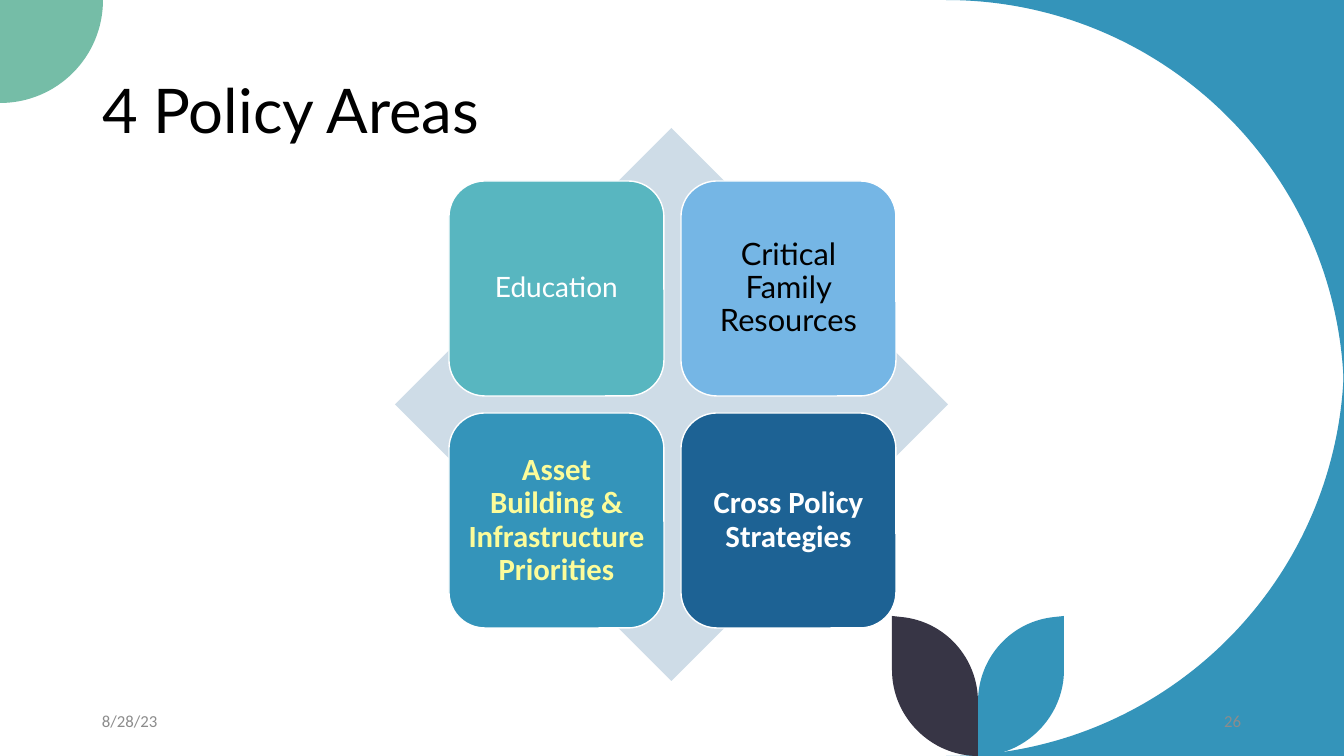
"""Build the "4 Policy Areas" slide: four tiles over a diamond, with leaf decoration."""
from lxml.etree import SubElement
from pptx import Presentation
from pptx.dml.color import RGBColor
from pptx.enum.shapes import MSO_SHAPE as Preset
from pptx.enum.text import MSO_ANCHOR as Anchor, PP_ALIGN as Align
from pptx.oxml.ns import qn
from pptx.util import Pt

WIDTH, HEIGHT = 1344, 756
PX = 12192000 / WIDTH
SLIDE_NUMBER = "26"

BLACK = RGBColor(0x00, 0x00, 0x00)
WHITE = RGBColor(0xFF, 0xFF, 0xFF)
YELLOW = RGBColor(0xFC, 0xFC, 0x9A)
GRAY = RGBColor(0x8C, 0x8C, 0x8C)
PALE_BLUE = RGBColor(0xCE, 0xDC, 0xE7)
TEAL = RGBColor(0x58, 0xB6, 0xC0)
SKY = RGBColor(0x75, 0xB6, 0xE5)
BLUE = RGBColor(0x34, 0x94, 0xBA)
NAVY = RGBColor(0x1D, 0x62, 0x94)
GREEN = RGBColor(0x75, 0xBD, 0xA7)
DARK = RGBColor(0x37, 0x35, 0x45)

presentation = Presentation()
presentation.slide_width = round(WIDTH * PX)
presentation.slide_height = round(HEIGHT * PX)
presentation.element.set("firstSlideNum", SLIDE_NUMBER)
slide = presentation.slides.add_slide(presentation.slide_layouts[5])
shapes = slide.shapes


def box(*lengths):
    return [round(length * PX) for length in lengths]


def write_text(shape, text, *, size, color, font="Lato", bold=False,
               align=Align.LEFT, spacing=1.0, inset=None):
    frame = shape.text_frame
    frame.word_wrap = True
    frame.vertical_anchor = Anchor.MIDDLE
    if inset is not None:
        frame.margin_left = frame.margin_right = round(inset * PX)
        frame.margin_top = frame.margin_bottom = round(inset * PX)
    paragraph = frame.paragraphs[0]
    paragraph.alignment = align
    paragraph.line_spacing = spacing
    run = paragraph.add_run()
    run.text = text
    run.font.name = font
    run.font.size = Pt(size)
    run.font.bold = bold
    run.font.color.rgb = color
    return run


title = shapes.title
title.left, title.top, title.width, title.height = box(92, 41, 1160, 146)
write_text(title, "4 Policy Areas", size=44, color=BLACK, spacing=0.9)

right_leaf = [(1064, 616), (1064, 670), (1064, 717, 1025, 756, 978, 756),
              (978, 702), (978, 658, 1011, 621, 1055, 617)]
left_leaf = [tuple(1956 - value if index % 2 == 0 else value
                   for index, value in enumerate(step)) for step in right_leaf]
outlines = [
    ([(1344, 0), (946, 0), (1166, 0, 1344, 178, 1344, 398)], BLUE),
    ([(1344, 358), (1344, 578, 1166, 756, 946, 756), (1344, 756)], BLUE),
    ([(0, 0), (103, 0), (103, 57, 57, 103, 0, 103)], GREEN),
    (right_leaf, BLUE),
    (left_leaf, DARK),
]
for steps, color in outlines:
    ends = [step[-2:] for step in steps]
    left, top = min(x for x, y in ends), min(y for x, y in ends)
    builder = shapes.build_freeform(*ends[0], scale=PX)
    builder.add_line_segments(ends[1:], close=True)
    outline = builder.convert_to_shape()
    segments = list(outline.element.iter(qn("a:lnTo")))
    for step, segment in zip(steps[1:], segments):
        if len(step) == 6:
            curve = segment.getparent().makeelement(qn("a:cubicBezTo"))
            for x, y in zip(step[::2], step[1::2]):
                SubElement(curve, qn("a:pt"), x=str(x - left), y=str(y - top))
            segment.getparent().replace(segment, curve)
    outline.shadow.inherit = False
    outline.fill.solid()
    outline.fill.fore_color.rgb = color
    outline.line.fill.background()

diamond = shapes.add_shape(Preset.DIAMOND, *box(395, 128, 553, 553))
diamond.shadow.inherit = False
diamond.fill.solid()
diamond.fill.fore_color.rgb = PALE_BLUE
diamond.line.fill.background()

TILE_LEFT, TILE_TOP, TILE_SIZE, TILE_PITCH = 449, 181, 215, 232
tiles = [
    ("Education", TEAL, dict(size=20, color=WHITE)),
    ("Critical Family Resources", SKY, dict(size=22, color=BLACK)),
    ("Asset Building & Infrastructure Priorities", BLUE,
     dict(size=22, color=YELLOW, font="Calibri", bold=True)),
    ("Cross Policy Strategies", NAVY,
     dict(size=22, color=WHITE, font="Calibri", bold=True)),
]
for index, (text, fill, text_format) in enumerate(tiles):
    row, column = divmod(index, 2)
    tile = shapes.add_shape(
        Preset.ROUNDED_RECTANGLE,
        *box(TILE_LEFT + column * TILE_PITCH, TILE_TOP + row * TILE_PITCH,
             TILE_SIZE, TILE_SIZE))
    tile.shadow.inherit = False
    tile.fill.solid()
    tile.fill.fore_color.rgb = fill
    tile.line.color.rgb = WHITE
    tile.line.width = Pt(1)
    write_text(tile, text, align=Align.CENTER, spacing=0.9, inset=8, **text_format)

footer_format = dict(size=12, color=GRAY, font="Calibri")
date = shapes.add_textbox(*box(92, 701, 302, 40))
write_text(date, "8/28/23", **footer_format)

number = shapes.add_textbox(*box(949, 701, 302, 40))
number_run = write_text(number, SLIDE_NUMBER, align=Align.RIGHT, **footer_format)
field = number_run._r
field.tag = qn("a:fld")
field.set("id", "{B6F15528-21DE-4FAA-801E-634DDDAF4B2B}")
field.set("type", "slidenum")

presentation.save("out.pptx")
